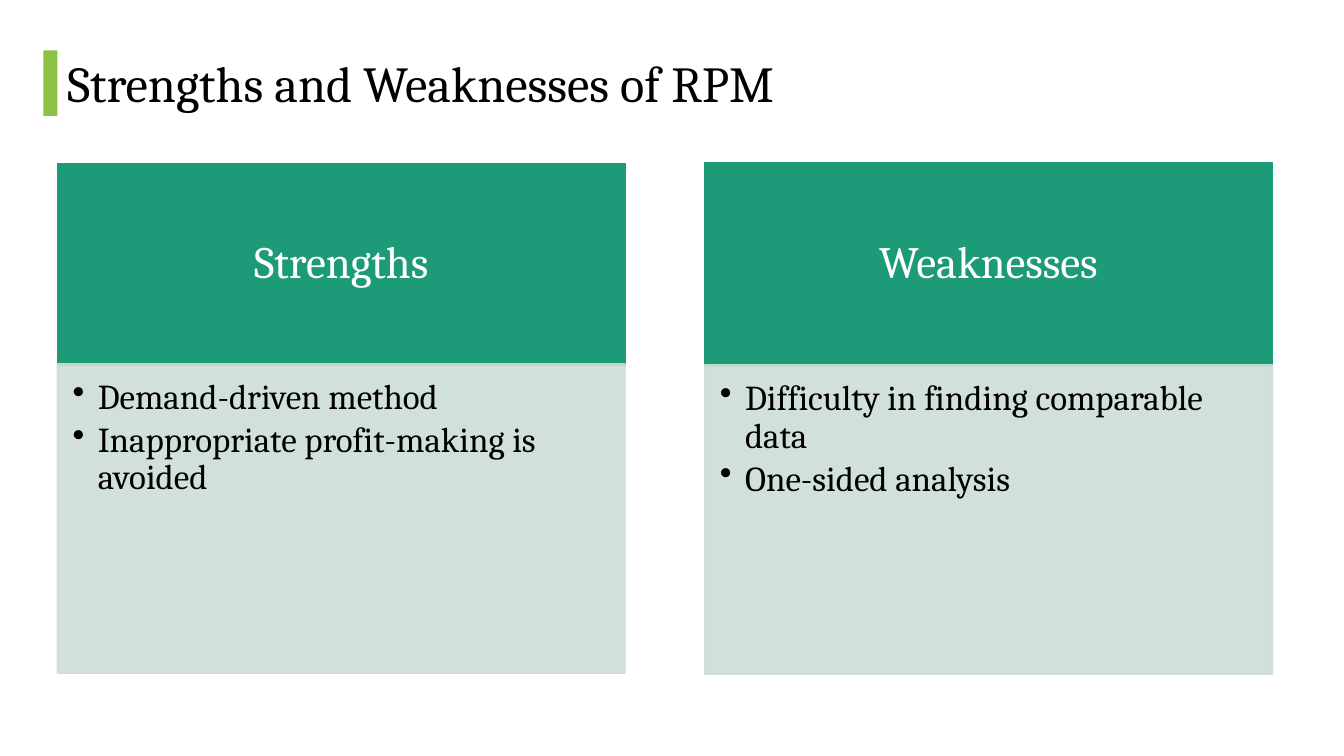
import pptx
import pptx.util
import pptx.dml.color
import pptx.enum.shapes
import pptx.enum.text
import pptx.oxml.ns
from lxml import etree

Inches = pptx.util.Inches
Pt = pptx.util.Pt
ALIGN = pptx.enum.text.PP_ALIGN
ANCHOR = pptx.enum.text.MSO_ANCHOR

COLORS = {
    "accent": "8BC145",
    "header": "1D9A78",
    "panel": "CDDED6",
    "ink": "000000",
    "white": "FFFFFF",
}
FONT = "Cambria"
COLUMN_WIDTH = 5.63
PANEL_HEIGHT = 3.07
COLUMNS = [
    # heading, left, header top, header height, panel top, points
    ("Strengths", 0.57, 1.62, 2, 3.61,
     ["Demand-driven method", "Inappropriate profit-making is avoided"]),
    ("Weaknesses", 6.99, 1.61, 2.02, 3.62,
     ["Difficulty in finding comparable data", "One-sided analysis"]),
]


def rgb(name):
    return pptx.dml.color.RGBColor.from_string(COLORS[name])


def add_child(parent, tag, **attributes):
    return etree.SubElement(parent, pptx.oxml.ns.qn(tag), attributes)


def set_opacity(color_format_parent, percent):
    """Make every solid colour below the element partly transparent."""
    for color in color_format_parent.iter(pptx.oxml.ns.qn("a:srgbClr")):
        add_child(color, "a:alpha", val=str(percent * 1000))


def add_block(slide, left, top, width, height, color, outlined=True, opacity=100):
    block = slide.shapes.add_shape(
        pptx.enum.shapes.MSO_SHAPE.RECTANGLE,
        Inches(left), Inches(top), Inches(width), Inches(height))
    block.shadow.inherit = False
    block.fill.solid()
    block.fill.fore_color.rgb = rgb(color)
    if outlined:
        block.line.color.rgb = rgb(color)
        block.line.width = Pt(1)
    else:
        block.line.fill.background()
    if opacity < 100:
        set_opacity(block.element.spPr, opacity)
    return block


def add_bullet(paragraph):
    properties = paragraph._p.get_or_add_pPr()
    properties.set("marL", str(Inches(0.25)))
    properties.set("indent", str(-Inches(0.25)))
    add_child(properties, "a:buChar", char="•")


def write(holder, lines, size, color="ink", align=ALIGN.LEFT, anchor=ANCHOR.MIDDLE,
          insets=(0.1, 0.05, 0.1, 0.05), space_after=0, bulleted=False):
    """Fill a shape with one paragraph per line; insets run left, top, right, bottom."""
    frame = holder.text_frame
    frame.word_wrap = True
    frame.vertical_anchor = anchor
    (frame.margin_left, frame.margin_top,
     frame.margin_right, frame.margin_bottom) = map(Inches, insets)
    for index, line in enumerate(lines):
        paragraph = frame.add_paragraph() if index else frame.paragraphs[0]
        paragraph.alignment = align
        paragraph.line_spacing = 0.9
        paragraph.space_after = Pt(space_after)
        if bulleted:
            add_bullet(paragraph)
        run = paragraph.add_run()
        run.text = line
        run.font.name = FONT
        run.font.size = Pt(size)
        run.font.color.rgb = rgb(color)


def add_title(slide, title):
    title_box = slide.shapes.add_textbox(
        Inches(0.57), Inches(0.24), Inches(11.93), Inches(1.24))
    write(title_box, [title], size=36)
    add_block(slide, 0.43, 0.5, 0.14, 0.65, "accent", outlined=False)


def add_column(slide, heading, left, header_top, header_height, panel_top, points):
    header = add_block(slide, left, header_top, COLUMN_WIDTH, header_height, "header")
    write(header, [heading], size=32, color="white", align=ALIGN.CENTER,
          insets=(0.25, 0.14, 0.25, 0.14))
    panel = add_block(slide, left, panel_top, COLUMN_WIDTH, PANEL_HEIGHT, "panel",
                      opacity=90)
    write(panel, points, size=25, anchor=ANCHOR.TOP,
          insets=(0.15, 0.15, 0.19, 0.22), space_after=3.75, bulleted=True)


def main():
    deck = pptx.Presentation()
    deck.slide_width = Inches(13.33)
    deck.slide_height = Inches(7.5)
    slide = deck.slides.add_slide(deck.slide_layouts[6])
    add_title(slide, "Strengths and Weaknesses of RPM")
    for column in COLUMNS:
        add_column(slide, *column)
    deck.save("out.pptx")


if __name__ == "__main__":
    main()
